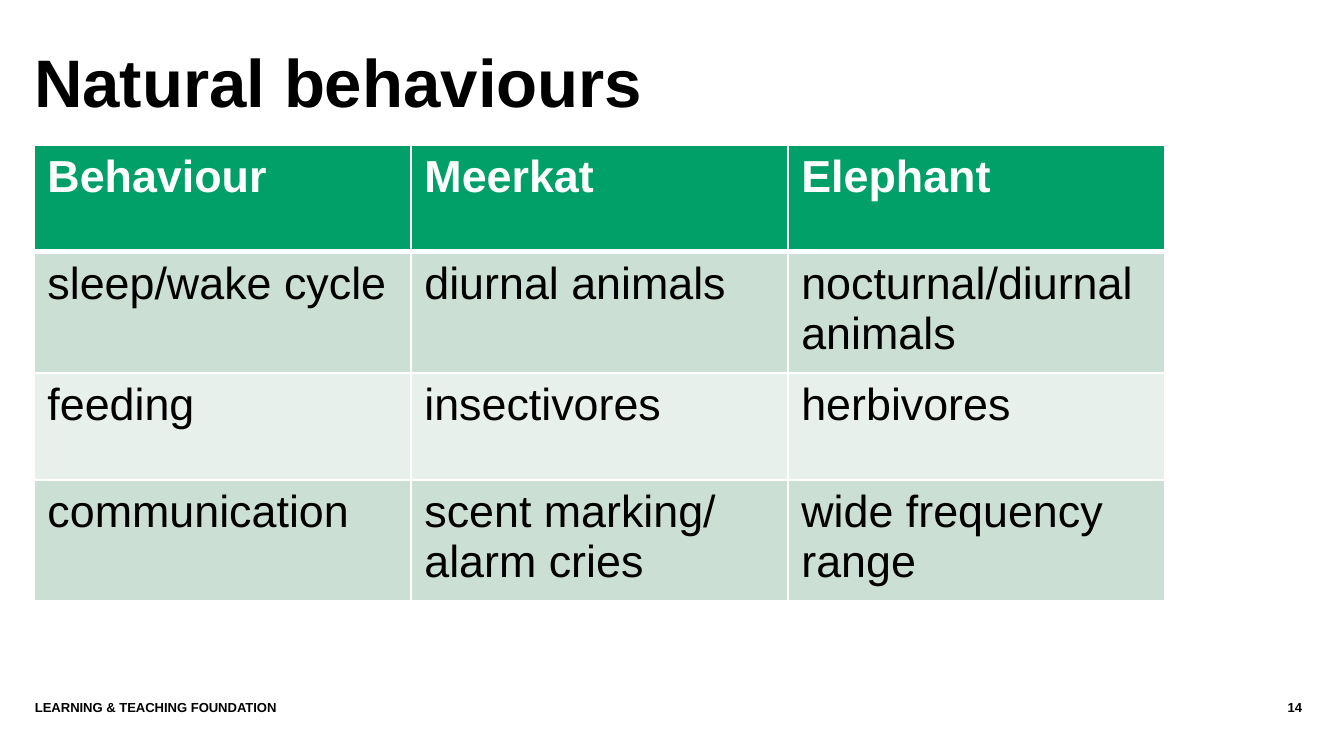
from dataclasses import dataclass

from lxml.etree import SubElement
from pptx import Presentation
from pptx.dml.color import RGBColor as Rgb
from pptx.enum.text import MSO_ANCHOR as Anchor, PP_ALIGN as Align
from pptx.oxml.ns import qn
from pptx.util import Emu, Pt

EMU_PER_PX = 914400 / 134.4


@dataclass(frozen=True)
class Theme:
    """Colours, typeface and type sizes of the slide."""
    font: str = "Arial"
    ink: str = "000000"
    white: str = "FFFFFF"
    header: str = "00A068"
    bands: tuple = ("CCDFD4", "E7F0EB")
    title_size: int = 36
    table_size: int = 24
    footer_size: int = 7


THEME = Theme()

BEHAVIOURS = [
    ("Behaviour", "Meerkat", "Elephant"),
    ("sleep/wake cycle", "diurnal animals", "nocturnal/diurnal animals"),
    ("feeding", "insectivores", "herbivores"),
    ("communication", "scent marking/\nalarm cries", "wide frequency range"),
]


def px(length):
    """Turn whole pixels into EMU."""
    return Emu(round(length * EMU_PER_PX))


def style(paragraph, size, color, bold):
    """Set the font of a whole paragraph."""
    font = paragraph.font
    font.name, font.size, font.bold = THEME.font, Pt(size), bold
    font.color.rgb = Rgb.from_string(color)


def add_label(slide, text, box, size, align=Align.LEFT, anchor=Anchor.TOP):
    """Add bold text without insets and return its paragraph."""
    frame = slide.shapes.add_textbox(*map(px, box)).text_frame
    frame.word_wrap = True
    frame.vertical_anchor = anchor
    frame.margin_left = frame.margin_right = 0
    frame.margin_top = frame.margin_bottom = 0
    paragraph = frame.paragraphs[0]
    paragraph.text = text
    paragraph.alignment = align
    style(paragraph, size, THEME.ink, True)
    return paragraph


def add_borders(cell, widths):
    """Draw white cell borders with the given widths in points."""
    properties = cell._tc.get_or_add_tcPr()
    for side, width in widths.items():
        line = SubElement(properties, qn(f"a:ln{side}"), w=str(Pt(width)))
        fill = SubElement(line, qn("a:solidFill"))
        SubElement(fill, qn("a:srgbClr"), val=THEME.white)


def fill_cell(cell, text, row):
    """Write and colour one cell according to its row."""
    is_header = row == 0
    paragraph = cell.text_frame.paragraphs[0]
    paragraph.text = text
    style(paragraph, THEME.table_size,
          THEME.white if is_header else THEME.ink, is_header)
    add_borders(cell, {"L": 1, "R": 1, "T": 3 if row == 1 else 1,
                       "B": 3 if is_header else 1})
    background = THEME.header if is_header else THEME.bands[(row - 1) % 2]
    cell.fill.solid()
    cell.fill.fore_color.rgb = Rgb.from_string(background)


def add_behaviour_table(slide, left, top, column_width, row_height):
    """Add the table that compares the animals."""
    rows, columns = len(BEHAVIOURS), len(BEHAVIOURS[0])
    table = slide.shapes.add_table(
        rows, columns, px(left), px(top),
        px(columns * column_width), px(rows * row_height)).table
    for column in table.columns:
        column.width = px(column_width)
    for row, texts in enumerate(BEHAVIOURS):
        table.rows[row].height = px(row_height)
        for column, text in enumerate(texts):
            fill_cell(table.cell(row, column), text, row)


def main():
    """Build and save the slide."""
    deck = Presentation()
    deck.slide_width, deck.slide_height = px(1344), px(756)
    slide = deck.slides.add_slide(deck.slide_layouts[6])
    add_label(slide, "LEARNING & TEACHING FOUNDATION", (35, 700, 1130, 40),
              THEME.footer_size)
    add_label(slide, "14", (1169, 700, 133, 40), THEME.footer_size, Align.RIGHT)
    title = add_label(slide, "Natural behaviours", (34, 36, 1241, 102),
                      THEME.title_size, anchor=Anchor.MIDDLE)
    title.line_spacing = 0.85
    add_behaviour_table(slide, 34, 145, 377, 107)
    deck.save("out.pptx")


if __name__ == "__main__":
    main()
